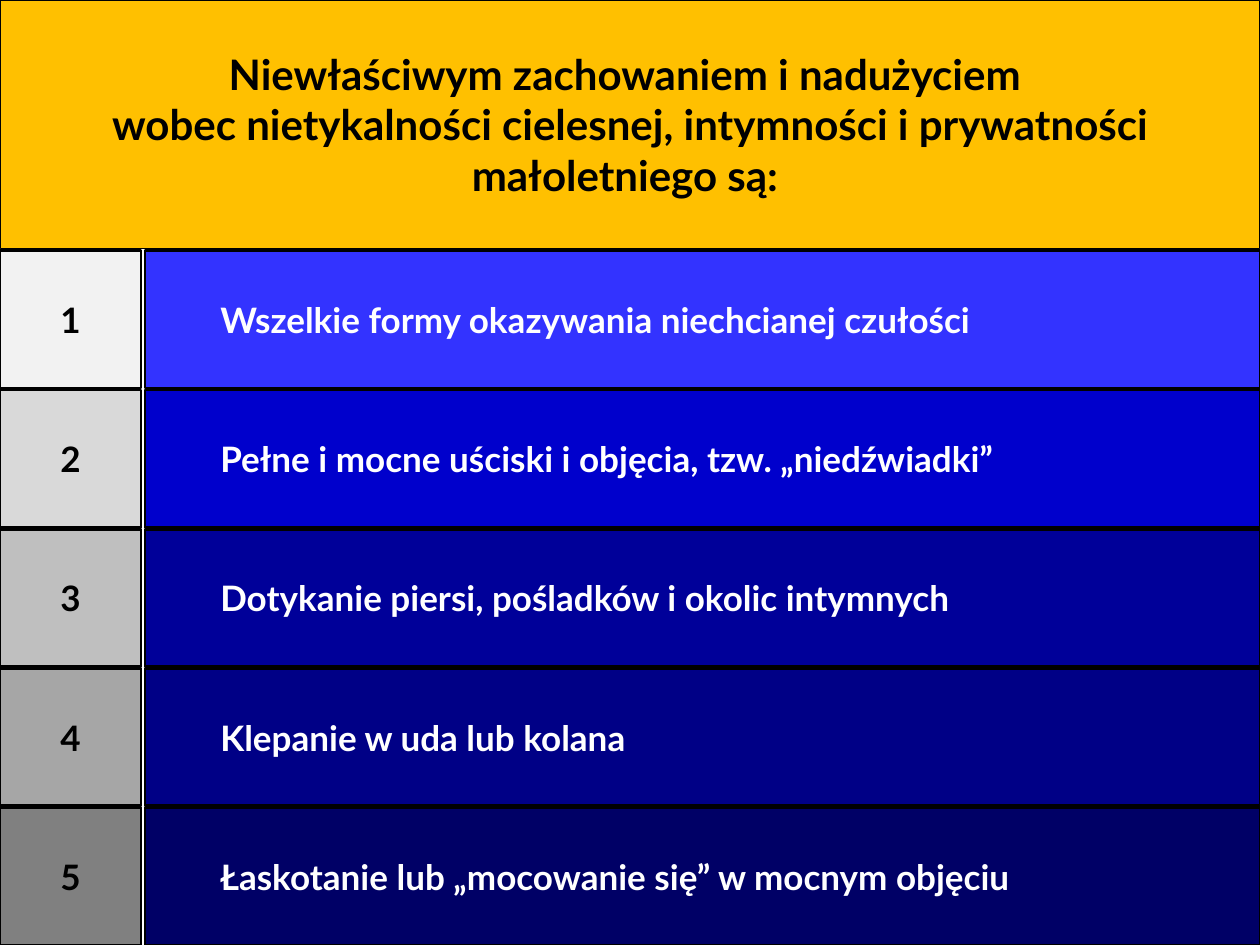
from dataclasses import dataclass

from pptx import Presentation
from pptx.dml.color import RGBColor
from pptx.enum.shapes import MSO_SHAPE
from pptx.enum.text import MSO_ANCHOR, PP_ALIGN
from pptx.util import Inches, Pt


@dataclass(frozen=True)
class Theme:
    font: str = "Lato"
    title_size: int = 24
    row_size: int = 20
    black: str = "000000"
    white: str = "FFFFFF"
    title_fill: str = "FFC000"
    number_fills: tuple = ("F2F2F2", "D9D9D9", "BFBFBF", "A6A6A6", "808080")
    row_fills: tuple = ("3333FF", "0000CC", "000099", "000086", "000066")
    title_line: float = 0.5
    row_line: float = 1.5


@dataclass(frozen=True)
class Box:
    left: float
    top: float
    width: float
    height: float


THEME = Theme()
TITLE = (
    "Niewłaściwym zachowaniem i nadużyciem \v"
    "wobec nietykalności cielesnej, intymności i prywatności małoletniego są: "
)
BEHAVIOURS = (
    "Wszelkie formy okazywania niechcianej czułości",
    "Pełne i mocne uściski i objęcia, tzw. „niedźwiadki”",
    "Dotykanie piersi, pośladków i okolic intymnych",
    "Klepanie w uda lub kolana",
    "Łaskotanie lub „mocowanie się” w mocnym objęciu",
)


def add_panel(page, box, text, fill, color, size, line, align=PP_ALIGN.CENTER, level=0):
    panel = page.shapes.add_shape(
        MSO_SHAPE.RECTANGLE,
        Inches(box.left), Inches(box.top), Inches(box.width), Inches(box.height),
    )
    panel.shadow.inherit = False
    panel.fill.solid()
    panel.fill.fore_color.rgb = RGBColor.from_string(fill)
    panel.line.color.rgb = RGBColor.from_string(THEME.black)
    panel.line.width = Pt(line)
    frame = panel.text_frame
    frame.word_wrap = True
    frame.vertical_anchor = MSO_ANCHOR.MIDDLE
    para = frame.paragraphs[0]
    para.text = text
    para.alignment = align
    para.level = level
    for span in para.runs:
        span.font.name = THEME.font
        span.font.size = Pt(size)
        span.font.bold = True
        span.font.color.rgb = RGBColor.from_string(color)


def add_title(page, box):
    add_panel(page, box, TITLE, THEME.title_fill, THEME.black,
              THEME.title_size, THEME.title_line)


def add_behaviours(page, box):
    number_width, text_offset, row_height = 1.12, 1.15, 1.09
    pitch = (box.height - row_height) / (len(BEHAVIOURS) - 1)
    rows = zip(BEHAVIOURS, THEME.number_fills, THEME.row_fills)
    for index, (behaviour, number_fill, row_fill) in enumerate(rows):
        top = box.top + index * pitch
        number_box = Box(box.left, top, number_width, row_height)
        text_box = Box(box.left + text_offset, top, box.width - text_offset, row_height)
        add_panel(page, number_box, str(index + 1), number_fill, THEME.black,
                  THEME.row_size, THEME.row_line)
        add_panel(page, text_box, behaviour, row_fill, THEME.white,
                  THEME.row_size, THEME.row_line, PP_ALIGN.LEFT, level=1)


def main():
    deck = Presentation()
    deck.slide_width = Inches(10)
    deck.slide_height = Inches(7.5)
    page = deck.slides.add_slide(deck.slide_layouts[6])
    add_title(page, Box(0, 0, 10, 1.97))
    add_behaviours(page, Box(0, 1.99, 10, 5.51))
    deck.save("out.pptx")


if __name__ == "__main__":
    main()
